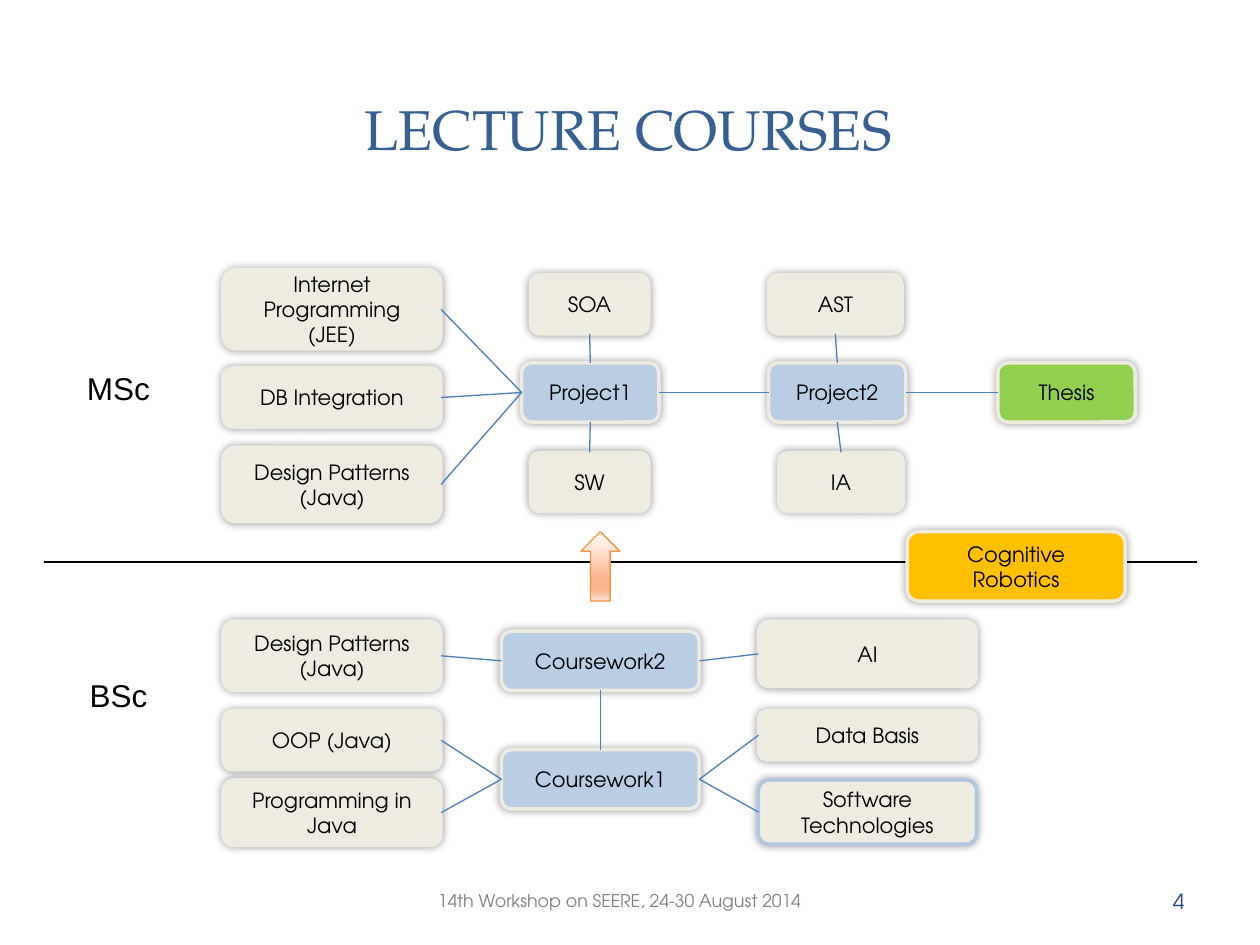
from dataclasses import dataclass

from lxml import etree
from pptx import Presentation
from pptx.dml.color import RGBColor
from pptx.enum.shapes import MSO_CONNECTOR, MSO_SHAPE
from pptx.enum.text import MSO_ANCHOR, PP_ALIGN
from pptx.oxml.ns import qn
from pptx.util import Inches, Pt

ROUNDED = MSO_SHAPE.ROUNDED_RECTANGLE
UP_ARROW = MSO_SHAPE.UP_ARROW
STRAIGHT = MSO_CONNECTOR.STRAIGHT
MIDDLE, TOP_ANCHOR = MSO_ANCHOR.MIDDLE, MSO_ANCHOR.TOP
CENTER, RIGHT_ALIGNED = PP_ALIGN.CENTER, PP_ALIGN.RIGHT
TOP, LEFT, BOTTOM, RIGHT = range(4)


@dataclass(frozen=True)
class Theme:
    width: float = 10
    height: float = 7.5
    columns: int = 100
    rows: int = 75
    heading_font: str = "TeX Gyre Pagella"
    body_font: str = "TeX Gyre Adventor"
    label_font: str = "Arial"
    title_size: int = 32
    label_size: int = 18
    body_size: int = 12
    footer_size: int = 10
    thin: float = 0.75
    border: float = 2
    shadow_blur: float = 5
    shadow_opacity: int = 40
    text: str = "000000"
    title: str = "376092"
    footer: str = "808080"
    number: str = "1F497D"
    course: str = "EEECE1"
    project: str = "B9CDE5"
    thesis: str = "92D050"
    robotics: str = "FFC000"
    highlight: str = "B0C6E1"
    link: str = "4B7EBC"
    divider: str = "000000"
    arrow_line: str = "F69240"
    arrow_stops: tuple = (
        (0, "FFFEFE"), (68, "F9B590"), (81, "F9B38C"), (86, "F9BA99"), (100, "FCE1D6"),
    )


THEME = Theme()


def write_text(shape, text, *, size=THEME.body_size, font=THEME.body_font,
               color=THEME.text, align=CENTER, anchor=MIDDLE):
    frame = shape.text_frame
    frame.word_wrap = True
    frame.vertical_anchor = anchor
    paragraph = frame.paragraphs[0]
    paragraph.text = text
    paragraph.alignment = align
    paragraph.font.size = Pt(size)
    paragraph.font.name = font
    paragraph.font.color.rgb = RGBColor.from_string(color)


class SlideBuilder:
    def __init__(self, slide, theme):
        self.slide = slide
        self.theme = theme

    def place(self, left, top, width, height):
        column = self.theme.width / self.theme.columns
        row = self.theme.height / self.theme.rows
        return (Inches(left * column), Inches(top * row),
                Inches(width * column), Inches(height * row))

    def set_line(self, line, color, width):
        line.color.rgb = RGBColor.from_string(color)
        line.width = Pt(width)

    def text(self, box, text, **text_format):
        shape = self.slide.shapes.add_textbox(*self.place(*box))
        write_text(shape, text, **text_format)

    def soften(self, shape):
        effects = shape._element.spPr.find(qn("a:effectLst"))
        shadow = etree.SubElement(effects, qn("a:outerShdw"),
                                  blurRad=str(Pt(self.theme.shadow_blur)), dist="0", dir="0")
        color = etree.SubElement(shadow, qn("a:srgbClr"), val="000000")
        etree.SubElement(color, qn("a:alpha"), val=str(self.theme.shadow_opacity * 1000))

    def card(self, box, text, fill=THEME.course, border=THEME.course):
        shape = self.slide.shapes.add_shape(ROUNDED, *self.place(*box))
        shape.shadow.inherit = False
        self.soften(shape)
        shape.fill.solid()
        shape.fill.fore_color.rgb = RGBColor.from_string(fill)
        self.set_line(shape.line, border, self.theme.border)
        write_text(shape, text)
        return shape

    def line(self, left, top, width, color):
        x, y, length, _ = self.place(left, top, width, 0)
        connector = self.slide.shapes.add_connector(STRAIGHT, x, y, x + length, y)
        self.set_line(connector.line, color, self.theme.thin)
        etree.SubElement(connector._element.spPr, qn("a:effectLst"))
        return connector

    def link(self, start, start_side, end, end_side):
        connector = self.line(0, 0, 0, self.theme.link)
        connector.begin_connect(start, start_side)
        connector.end_connect(end, end_side)

    def arrow(self, box):
        shape = self.slide.shapes.add_shape(UP_ARROW, *self.place(*box))
        shape.shadow.inherit = False
        shape.fill.gradient()
        shape.fill.gradient_angle = 270
        stops = shape._element.spPr.find(qn("a:gradFill")).find(qn("a:gsLst"))
        for stop in list(stops):
            stops.remove(stop)
        for position, color in self.theme.arrow_stops:
            stop = etree.SubElement(stops, qn("a:gs"), pos=str(position * 1000))
            etree.SubElement(stop, qn("a:srgbClr"), val=color)
        self.set_line(shape.line, self.theme.arrow_line, self.theme.thin)


def draw_master(builder):
    project_top, project_height, project_width = 28.8, 4.7, 10.9
    project1, project2, thesis = [
        builder.card((left, project_top, project_width, project_height), text, fill)
        for left, text, fill in (
            (41.4, "Project1", THEME.project),
            (61, "Project2", THEME.project),
            (79.2, "Thesis", THEME.thesis),
        )
    ]
    for top, height, text in (
        (21.4, 6.3, "Internet Programming (JEE)"),
        (29.2, 4.7, "DB Integration"),
        (35.5, 5.9, "Design Patterns (Java)"),
    ):
        course = builder.card((17.7, top, 17.3, height), text)
        builder.link(course, RIGHT, project1, LEFT)
    for left, width, above, below, project in (
        (42.1, 9.4, "SOA", "SW", project1),
        (61, 10.6, "AST", None, project2),
        (61.8, 9.9, None, "IA", project2),
    ):
        if above:
            course = builder.card((left, 21.8, width, project_height), above)
            builder.link(course, BOTTOM, project, TOP)
        if below:
            course = builder.card((left, 35.9, width, project_height), below)
            builder.link(course, TOP, project, BOTTOM)
    builder.link(project1, RIGHT, project2, LEFT)
    builder.link(project2, RIGHT, thesis, LEFT)


def draw_bachelor(builder):
    coursework2, coursework1 = [
        builder.card((39.8, top, 15.7, 4.7), text, THEME.project)
        for top, text in ((50.1, "Coursework2"), (59.5, "Coursework1"))
    ]
    builder.link(coursework1, TOP, coursework2, BOTTOM)
    left_side = (17.7, RIGHT, LEFT)
    right_side = (60.2, LEFT, RIGHT)
    for (left, course_side, coursework_side), top, height, text, border, coursework in (
        (left_side, 49.3, 5.5, "Design Patterns (Java)", THEME.course, coursework2),
        (left_side, 56.4, 4.7, "OOP (Java)", THEME.course, coursework1),
        (left_side, 61.9, 5.2, "Programming in Java", THEME.course, coursework1),
        (right_side, 49.3, 5.2, "AI", THEME.course, coursework2),
        (right_side, 56.4, 3.9, "Data Basis", THEME.course, coursework1),
        (right_side, 61.9, 5.1, "Software Technologies", THEME.highlight, coursework1),
    ):
        course = builder.card((left, top, 17.3, height), text, border=border)
        builder.link(course, course_side, coursework, coursework_side)


def main():
    presentation = Presentation()
    presentation.slide_width = Inches(THEME.width)
    presentation.slide_height = Inches(THEME.height)
    slide = presentation.slides.add_slide(presentation.slide_layouts[6])
    builder = SlideBuilder(slide, THEME)

    builder.text((4.7, 4.5, 90.3, 11.4), "LECTURE COURSES", size=THEME.title_size,
                 font=THEME.heading_font, color=THEME.title)
    builder.text((28.7, 69.5, 40.9, 4), "14th Workshop on SEERE, 24-30 August 2014",
                 size=THEME.footer_size, color=THEME.footer)
    builder.text((71.7, 69.5, 23.3, 4), "4", color=THEME.number, align=RIGHT_ALIGNED)
    for top, degree in ((28.8, "MSc"), (53.2, "BSc")):
        builder.text((3.5, top, 11.8, 4), degree, size=THEME.label_size,
                     font=THEME.label_font, anchor=TOP_ANCHOR)

    draw_bachelor(builder)
    builder.line(3.5, 44.6, 91.5, THEME.divider)
    builder.card((72, 42.2, 17.3, 5.5), "Cognitive Robotics", THEME.robotics)
    draw_master(builder)
    builder.arrow((46.1, 42.2, 3.1, 5.5))
    presentation.save("out.pptx")


if __name__ == "__main__":
    main()
